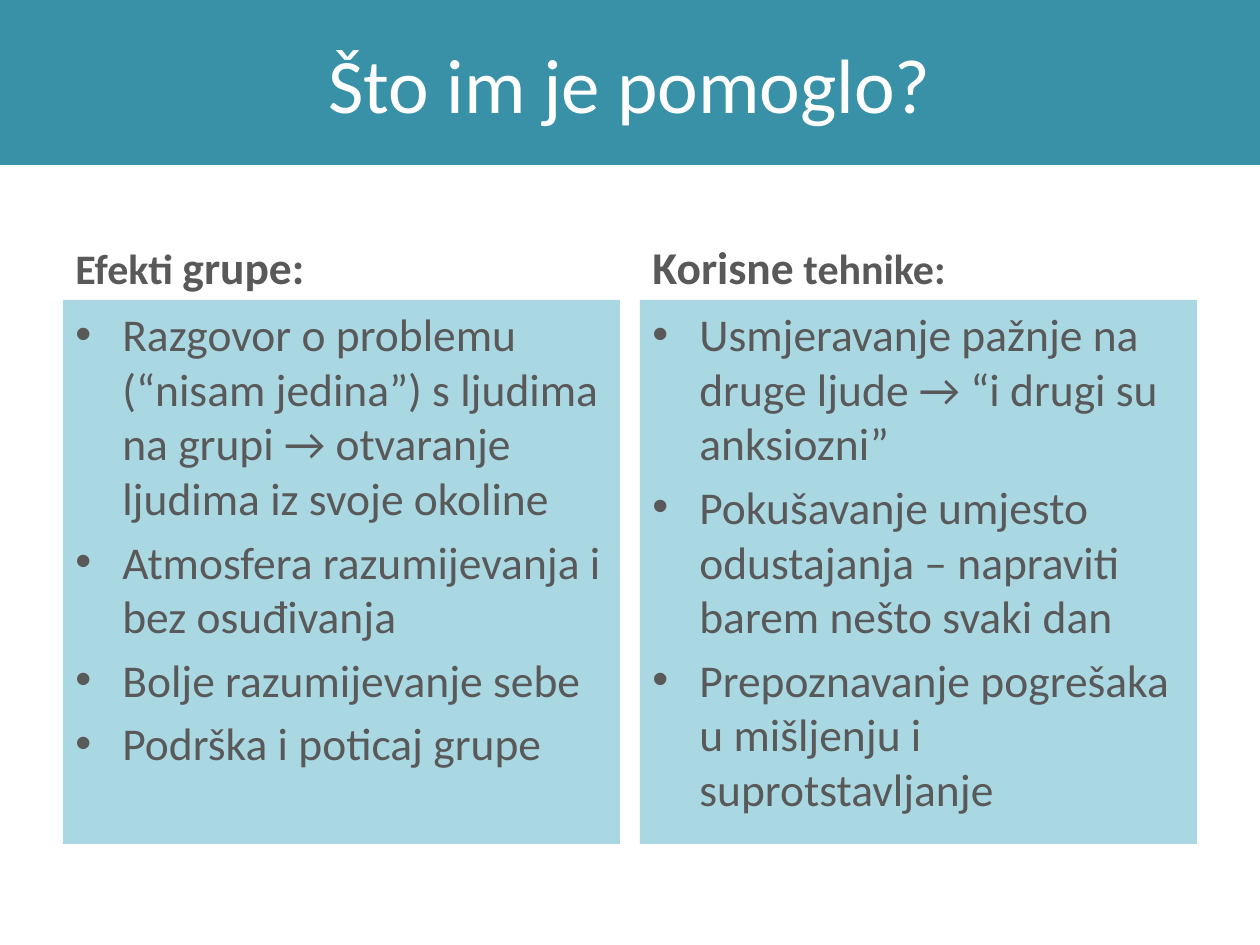
from lxml import etree
from pptx import Presentation
from pptx.dml.color import RGBColor
from pptx.enum import shapes, text
from pptx.oxml.ns import qn
from pptx.util import Emu, Pt

PX_PER_INCH = 126
COLORS = {"banner": "3891A7", "panel": "A9D7E2", "title": "FFFFFF", "body": "595959"}
BODY_SIZE = 26
BULLET_INDENT = 47

COLUMNS = [
    (
        [("Efekti ", 24), ("grupe:", BODY_SIZE)],
        [
            "Razgovor o problemu (“nisam jedina”) s ljudima na grupi → otvaranje ljudima iz svoje okoline",
            "Atmosfera razumijevanja i bez osuđivanja",
            "Bolje razumijevanje sebe",
            "Podrška i poticaj grupe",
        ],
    ),
    (
        [("Korisne", BODY_SIZE), (" tehnike:", 24)],
        [
            "Usmjeravanje pažnje na druge ljude → “i drugi su anksiozni”",
            "Pokušavanje umjesto odustajanja – napraviti barem nešto svaki dan",
            "Prepoznavanje pogrešaka u mišljenju i suprotstavljanje",
        ],
    ),
]


def px(length):
    return Emu(round(length * 914400 / PX_PER_INCH))


def add_run(paragraph, words, size, color, bold=False):
    run = paragraph.add_run()
    run.text = words
    font_format = {"name": "Calibri", "size": Pt(size), "bold": bold}
    for attribute, value in font_format.items():
        setattr(run.font, attribute, value)
    run.font.color.rgb = RGBColor.from_string(COLORS[color])


def set_frame(frame, anchor):
    frame.word_wrap = True
    frame.vertical_anchor = anchor


def add_panel(slide, box, color, anchor):
    panel = slide.shapes.add_shape(shapes.MSO_SHAPE.RECTANGLE, *map(px, box))
    panel.shadow.inherit = False
    panel.fill.solid()
    panel.fill.fore_color.rgb = RGBColor.from_string(COLORS[color])
    panel.line.fill.background()
    set_frame(panel.text_frame, anchor)
    return panel.text_frame


def add_title(slide, words):
    banner = add_panel(slide, (0, 0, 1260, 165), "banner", text.MSO_ANCHOR.MIDDLE)
    heading = banner.paragraphs[0]
    heading.alignment = text.PP_ALIGN.CENTER
    add_run(heading, words, 44, "title")


def add_heading(slide, box, parts):
    frame = slide.shapes.add_textbox(*map(px, box)).text_frame
    set_frame(frame, text.MSO_ANCHOR.BOTTOM)
    heading = frame.paragraphs[0]
    heading.space_before = Pt(5.2)
    for words, size in parts:
        add_run(heading, words, size, "body", bold=True)


def add_bullets(slide, box, points):
    frame = add_panel(slide, box, "panel", text.MSO_ANCHOR.TOP)
    for index, words in enumerate(points):
        point = frame.add_paragraph() if index else frame.paragraphs[0]
        point.alignment = text.PP_ALIGN.LEFT
        point.space_before = Pt(5.2)
        add_run(point, words, BODY_SIZE, "body")
        # Hanging indent with a round bullet
        properties = point._p.get_or_add_pPr()
        properties.set("marL", str(px(BULLET_INDENT)))
        properties.set("indent", str(-px(BULLET_INDENT)))
        etree.SubElement(properties, qn("a:buFont")).set("typeface", "Arial")
        etree.SubElement(properties, qn("a:buChar")).set("char", "•")


def main():
    deck = Presentation()
    deck.slide_width, deck.slide_height = px(1260), px(945)
    slide = deck.slides.add_slide(deck.slide_layouts[6])

    # Title banner
    add_title(slide, "Što im je pomoglo?")

    # Two columns, each a heading above a panel of bullets
    margin, width, gap = 63, 557, 20
    for index, (heading, points) in enumerate(COLUMNS):
        left = margin + index * (width + gap)
        add_heading(slide, (left, 212, width, 88), heading)
        add_bullets(slide, (left, 300, width, 544), points)

    deck.save("out.pptx")


if __name__ == "__main__":
    main()
